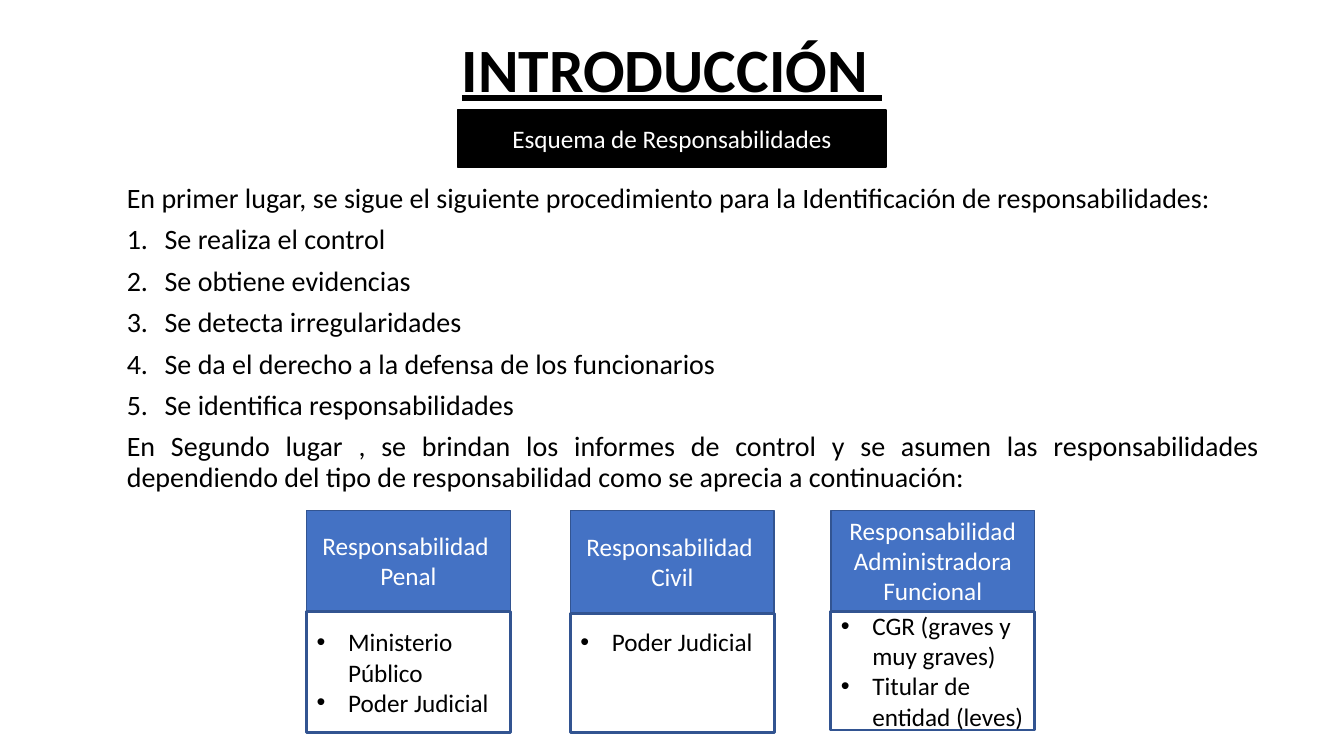
from lxml import etree
from pptx import Presentation
from pptx import util as u
from pptx.dml.color import RGBColor
from pptx.enum import shapes, text
from pptx.oxml import ns

Pt = u.Pt
BLACK = RGBColor(0, 0, 0)
WHITE = RGBColor(255, 255, 255)
BLUE = RGBColor(0x44, 0x72, 0xC4)
NAVY = RGBColor(0x32, 0x54, 0x91)
ALIGN = text.PP_ALIGN
ANCHOR = text.MSO_ANCHOR


class SlideBuilder:
    font = "Calibri"

    def __init__(self, slide):
        self.slide = slide

    def format(self, paragraph, size, color, align, spacing=None, after=None):
        paragraph.alignment = align
        if spacing:
            paragraph.line_spacing = spacing
        if after is not None:
            paragraph.space_after = Pt(after)
        paragraph.font.name = self.font
        paragraph.font.size = Pt(size)
        paragraph.font.color.rgb = color

    def marker(self, paragraph, indent, bullet=None):
        """Hang the paragraph behind a bullet, or a number if none is given."""
        props = paragraph._p.get_or_add_pPr()
        props.set("marL", str(Pt(indent)))
        props.set("indent", str(-Pt(indent)))
        if bullet:
            face = etree.SubElement(props, ns.qn("a:buFont"))
            face.set("typeface", "Arial")
            etree.SubElement(props, ns.qn("a:buChar")).set("char", bullet)
        else:
            number = etree.SubElement(props, ns.qn("a:buAutoNum"))
            number.set("type", "arabicPeriod")

    def paragraphs(self, frame, lines):
        frame.word_wrap = True
        for i, line in enumerate(lines):
            paragraph = frame.add_paragraph() if i else frame.paragraphs[0]
            paragraph.text = line
            yield paragraph

    def title(self, wording, left, top, width, height):
        heading = self.slide.shapes.title
        heading.left, heading.top = Pt(left), Pt(top)
        heading.width, heading.height = Pt(width), Pt(height)
        frame = heading.text_frame
        frame.auto_size = text.MSO_AUTO_SIZE.NONE
        frame.vertical_anchor = ANCHOR.MIDDLE
        for paragraph in self.paragraphs(frame, [wording]):
            self.format(paragraph, 44, BLACK, ALIGN.CENTER, 0.9, 6)
            paragraph.font.bold = paragraph.font.underline = True

    def procedure(self, opening, steps, closing, left, top, width, height):
        box = self.slide.shapes.add_textbox(Pt(left), Pt(top), Pt(width), Pt(height))
        for paragraph in self.paragraphs(box.text_frame, [opening, *steps, closing]):
            if paragraph.text in steps:
                self.marker(paragraph, 27)
            self.format(paragraph, 20, BLACK, ALIGN.JUSTIFY, 0.9, 8)

    def panel(self, lines, left, top, width, height, fill=None, line=NAVY,
              weight=1, bullet=None):
        """Draw a rectangle with centred lines, or a bulleted list."""
        box = self.slide.shapes.add_shape(
            shapes.MSO_SHAPE.RECTANGLE, Pt(left), Pt(top), Pt(width), Pt(height))
        box.shadow.inherit = False
        if fill is None:
            box.fill.background()
        else:
            box.fill.solid()
            box.fill.fore_color.rgb = fill
        box.line.color.rgb = line
        box.line.width = Pt(weight)
        box.text_frame.vertical_anchor = ANCHOR.MIDDLE
        for paragraph in self.paragraphs(box.text_frame, lines):
            if bullet:
                self.marker(paragraph, 22.5, bullet)
            self.format(paragraph, 18, BLACK if bullet else WHITE,
                        ALIGN.LEFT if bullet else ALIGN.CENTER)
        return box


def main():
    deck = Presentation()
    deck.slide_width, deck.slide_height = Pt(960), Pt(540)
    builder = SlideBuilder(deck.slides.add_slide(deck.slide_layouts[5]))

    builder.title("INTRODUCCIÓN ", 291, 0, 378, 103)
    builder.panel(["Esquema de Responsabilidades"], 327, 78.5, 306, 41,
                  fill=BLACK, line=BLACK)
    builder.procedure(
        "En primer lugar, se sigue el siguiente procedimiento para la "
        "Identificación de responsabilidades:",
        ["Se realiza el control",
         "Se obtiene evidencias",
         "Se detecta irregularidades",
         "Se da el derecho a la defensa de los funcionarios",
         "Se identifica responsabilidades"],
        "En Segundo lugar , se brindan los informes de control y se asumen las "
        "responsabilidades dependiendo del tipo de responsabilidad como se "
        "aprecia a continuación:",
        83.5, 128, 823, 240)

    # left, header height, list height, header lines, responsible bodies
    liabilities = [
        (219, 72, 87, ["Responsabilidad ", "Penal"],
         ["Ministerio Público", "Poder Judicial"]),
        (407.5, 73.5, 85, ["Responsabilidad ", "Civil"],
         ["Poder Judicial"]),
        (593.5, 72, 85, ["Responsabilidad", "Administradora Funcional"],
         ["CGR (graves y muy graves)", "Titular de entidad (leves)"]),
    ]
    header_top, column_width = 364.5, 145.5
    for left, header_height, list_height, header, bodies in liabilities:
        builder.panel(header, left, header_top, column_width, header_height, fill=BLUE)
        body_list = builder.panel(bodies, left, header_top + header_height,
                                  column_width, list_height, weight=2, bullet="•")
        if len(bodies) == 1:
            body_list.text_frame.vertical_anchor = ANCHOR.TOP
            body_list.text_frame.margin_top = Pt(9.5)

    deck.save("out.pptx")


if __name__ == "__main__":
    main()
